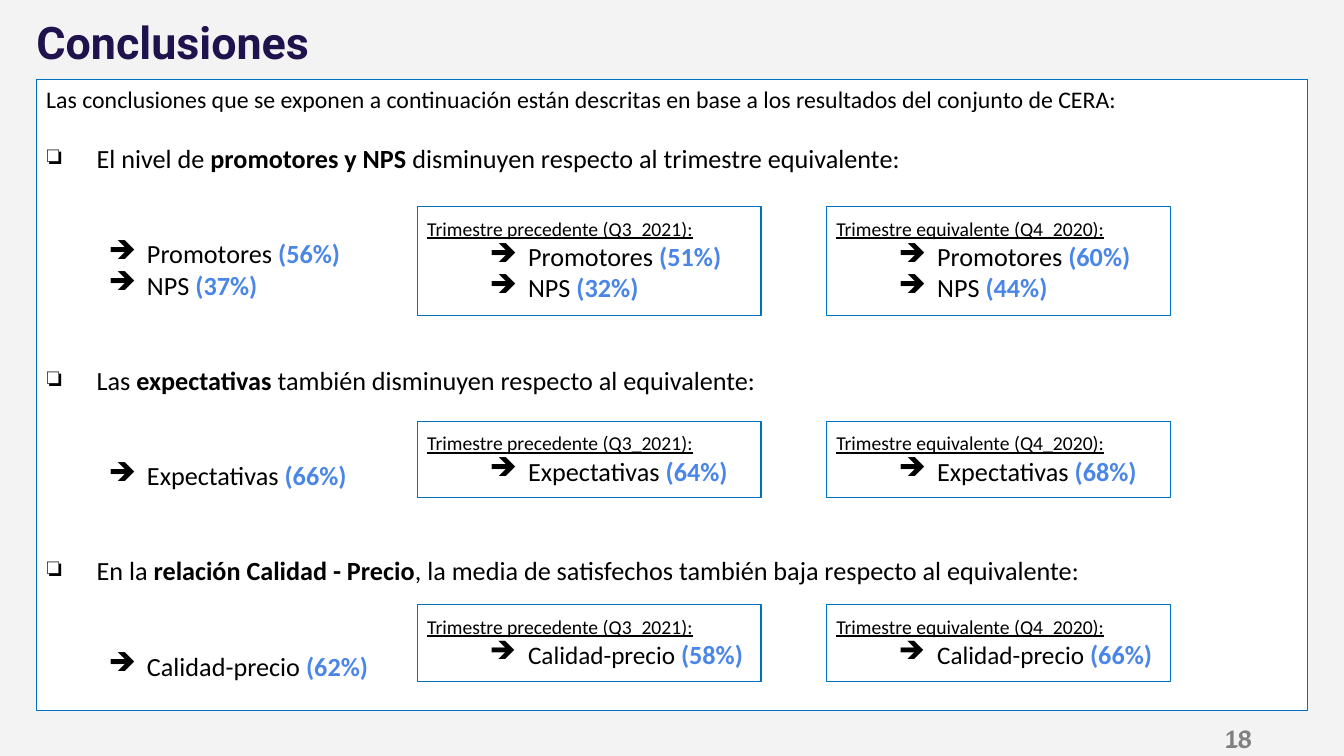
from lxml import etree
from pptx import Presentation
from pptx.dml.color import RGBColor
from pptx.enum import shapes, text
from pptx.oxml.ns import qn
from pptx.util import Pt

BACKGROUND = RGBColor(0xF3, 0xF3, 0xF3)
WHITE = RGBColor(0xFF, 0xFF, 0xFF)
BLACK = RGBColor(0, 0, 0)
NAVY = RGBColor(0x20, 0x12, 0x4D)
BORDER = RGBColor(0x00, 0x70, 0xC0)
FIGURE = RGBColor(0x4A, 0x86, 0xE8)
GREY = RGBColor(0x7F, 0x7F, 0x7F)

BODY_SIZE = 18.7
TWO_LINES = 45.6
QUARTERS = ["Trimestre precedente (Q3_2021):", "Trimestre equivalente (Q4_2020):"]

# heading as (text, bold), top of the cards in the panel, label size in the cards,
# measures as (name, current quarter, preceding quarter, equivalent quarter)
SECTIONS = [
    ([("El nivel de ", False), ("promotores y NPS ", True),
      ("disminuyen respecto al trimestre equivalente:", False)],
     90.7, BODY_SIZE,
     [("Promotores", "56%", "51%", "60%"), ("NPS", "37%", "32%", "44%")]),
    ([("Las ", False), ("expectativas ", True),
      ("también disminuyen respecto al equivalente:", False)],
     244, BODY_SIZE, [("Expectativas", "66%", "64%", "68%")]),
    ([("En la ", False), ("relación Calidad - Precio", True),
      (", la media de satisfechos también baja respecto al equivalente:", False)],
     375, 18, [("Calidad-precio", "62%", "58%", "66%")]),
]


def add_run(paragraph, words, size, color=BLACK, bold=False, name="Calibri"):
    run = paragraph.add_run()
    run.text = words
    run.font.name = name
    run.font.size = Pt(size)
    run.font.bold = bold
    run.font.color.rgb = color
    return run


def add_bullet(paragraph, character, margin, hanging):
    properties = paragraph._p.get_or_add_pPr()
    properties.set("marL", str(Pt(margin)))
    properties.set("indent", str(-Pt(hanging)))
    color = etree.SubElement(properties, qn("a:buClr"))
    etree.SubElement(color, qn("a:srgbClr")).set("val", str(BLACK))
    etree.SubElement(properties, qn("a:buChar")).set("char", character)
    paragraph.alignment = text.PP_ALIGN.JUSTIFY


def add_measure(frame, label, figure, label_size, space_before=0):
    """Add an arrow line with a label and its highlighted percentage."""
    paragraph = frame.add_paragraph()
    add_bullet(paragraph, "➔", 72, 27.4)
    paragraph.space_before = Pt(space_before)
    add_run(paragraph, label + " ", label_size)
    add_run(paragraph, f"({figure})", BODY_SIZE, FIGURE, bold=True)


def prepare_frame(shape, horizontal, vertical, anchor):
    frame = shape.text_frame
    frame.word_wrap = True
    frame.vertical_anchor = anchor
    frame.margin_left = frame.margin_right = Pt(horizontal)
    frame.margin_top = frame.margin_bottom = Pt(vertical)
    return frame


def add_text_box(slide, left, top, width, height, horizontal=0, vertical=0):
    shape = slide.shapes.add_textbox(Pt(left), Pt(top), Pt(width), Pt(height))
    return prepare_frame(shape, horizontal, vertical, text.MSO_ANCHOR.MIDDLE)


def add_bordered_box(slide, left, top, width, height, vertical):
    shape = slide.shapes.add_shape(shapes.MSO_SHAPE.RECTANGLE,
                                   Pt(left), Pt(top), Pt(width), Pt(height))
    shape.shadow.inherit = False
    shape.fill.solid()
    shape.fill.fore_color.rgb = WHITE
    shape.line.color.rgb = BORDER
    shape.line.width = Pt(0.75)
    return prepare_frame(shape, 7.2, vertical, text.MSO_ANCHOR.TOP)


def add_title(slide, left, top, width, height):
    frame = add_text_box(slide, left, top, width, height)
    add_run(frame.paragraphs[0], "Conclusiones", 32, NAVY, True, "Roboto")


def add_page_number(slide, left, top, width, height):
    frame = add_text_box(slide, left, top, width, height, 8.6, 4.3)
    paragraph = frame.paragraphs[0]
    paragraph.alignment = text.PP_ALIGN.RIGHT
    add_run(paragraph, "18", 17, GREY, name="Arial")


def add_quarter_card(slide, left, top, width, height, quarter, measures, label_size):
    frame = add_bordered_box(slide, left, top, width, height, 7.2)
    frame.auto_size = text.MSO_AUTO_SIZE.SHAPE_TO_FIT_TEXT
    paragraph = frame.paragraphs[0]
    paragraph.alignment = text.PP_ALIGN.LEFT
    add_run(paragraph, quarter, 14).font.underline = True
    for label, figure in measures:
        add_measure(frame, label, figure, label_size)


def add_conclusions(slide, left, top, width, height):
    """Draw the panel with its running text, then the quarter cards over it."""
    frame = add_bordered_box(slide, left, top, width, height, 3.6)
    paragraph = frame.paragraphs[0]
    paragraph.alignment = text.PP_ALIGN.JUSTIFY
    add_run(paragraph, "Las conclusiones que se exponen a continuación están descritas "
            "en base a los resultados del conjunto de CERA:", 17)

    for index, (heading, card_top, label_size, measures) in enumerate(SECTIONS):
        paragraph = frame.add_paragraph()
        add_bullet(paragraph, "❏", 36, 35.3)
        paragraph.space_before = Pt(TWO_LINES if index else 20.7)
        for words, bold in heading:
            add_run(paragraph, words, BODY_SIZE, bold=bold)
        for line, measure in enumerate(measures):
            add_measure(frame, measure[0], measure[1], BODY_SIZE,
                        0 if line else TWO_LINES)

        for column, quarter in enumerate(QUARTERS):
            figures = [(measure[0], measure[2 + column]) for measure in measures]
            add_quarter_card(slide, left + 272.2 + 292.2 * column, top + card_top,
                             245.5, 31.8 + 23 * len(measures),
                             quarter, figures, label_size)


def main():
    presentation = Presentation()
    presentation.slide_width, presentation.slide_height = Pt(960), Pt(540)
    slide = presentation.slides.add_slide(presentation.slide_layouts[6])
    slide.background.fill.solid()
    slide.background.fill.fore_color.rgb = BACKGROUND

    add_title(slide, 25.9, -0.7, 907.9, 60.5)
    add_conclusions(slide, 25.9, 56.9, 907.9, 450.7)
    for left, top in [(678.2, 513.4), (679, 512.6)]:
        add_page_number(slide, left, top, 223.9, 28.8)
    presentation.save("out.pptx")


if __name__ == "__main__":
    main()
